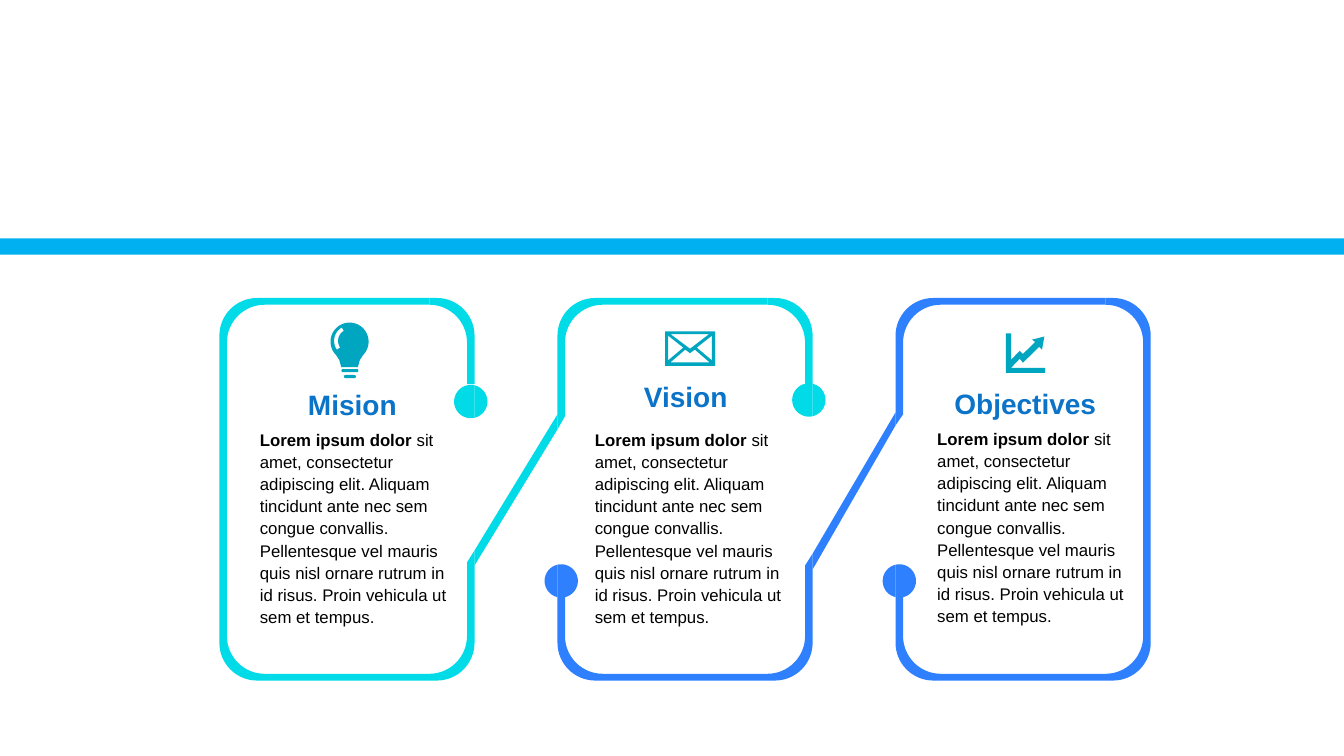
import math

import pptx
import pptx.dml.color
import pptx.enum.shapes
import pptx.enum.text
import pptx.util

Cm = pptx.util.Cm
SHAPES = pptx.enum.shapes.MSO_SHAPE
CYAN, BLUE, TEAL, BAR = "00DBE7", "2E80FF", "00A5C0", "00B0F0"
LEFT, PITCH, WIDTH = 5.53, 8.52, 6.43
TOP, BOTTOM, RADIUS = 7.51, 17.15, 0.95
SIDE, EDGE = 0.19, 0.17
SEAM = WIDTH - SIDE - RADIUS
SEAM_ENDS = ([(SEAM, TOP)], [(SEAM, TOP + EDGE)])
HOOK_ENDS = ([(WIDTH, 9.68)], [(WIDTH - SIDE, 9.68)])
FOOT_ENDS = ([(0, 15.04)], [(SIDE, 15.04)])
LOREM = ("sit amet, consectetur adipiscing elit. Aliquam tincidunt ante nec sem "
         "congue convallis. Pellentesque vel mauris quis nisl ornare rutrum in id "
         "risus. Proin vehicula ut sem et tempus.")
PANELS = [
    ("Mision", 5.92, 9.65, 6.3, 10.65),
    ("Vision", 14.32, 9.45, 14.74, 10.65),
    ("Objectives", 22.88, 9.62, 23.37, 10.63),
]
LINKS = [(0, 13.87, 14.25, 10.44, 10.82, CYAN), (1, 13.95, 14.35, 10.39, 10.72, BLUE)]
KNOBS = [(0, WIDTH - SIDE / 2, 10.12, CYAN), (1, WIDTH - SIDE / 2, 10.08, CYAN),
         (1, SIDE / 2, 14.64, BLUE), (2, SIDE / 2, 14.64, BLUE)]
ENVELOPE = [
    [(16.76, 8.35), (16.76, 9.22), (18.02, 9.22), (18.02, 8.35)],
    [(17.39, 8.79), (16.9, 8.42), (17.87, 8.42)],
    [(17.22, 8.76), (16.84, 9.08), (16.84, 8.46)],
    [(17.27, 8.81), (17.39, 8.9), (17.51, 8.81), (17.88, 9.13), (16.9, 9.13)],
    [(17.56, 8.76), (17.94, 8.46), (17.94, 9.08)],
]
TREND = [(25.48, 9.27), (25.7, 9.04), (25.78, 9.14), (26.19, 8.74), (26.26, 8.81),
         (26.32, 8.48), (26.01, 8.56), (26.09, 8.62), (25.78, 8.92), (25.7, 8.84),
         (25.48, 9.07), (25.48, 8.4), (25.35, 8.4), (25.35, 9.4), (26.34, 9.4),
         (26.34, 9.27)]


def rgb(value):
    return pptx.dml.color.RGBColor.from_string(value)


def paint(sp, color):
    sp.shadow.inherit = False
    sp.fill.solid()
    sp.fill.fore_color.rgb = rgb(color)
    sp.line.fill.background()


def add_block(slide, kind, x, y, w, h, color):
    sp = slide.shapes.add_shape(kind, Cm(x), Cm(y), Cm(w), Cm(h))
    paint(sp, color)
    return sp


def add_outline(slide, contours, color, left=0):
    points = [[(Cm(left + x), Cm(y)) for x, y in contour] for contour in contours]
    builder = slide.shapes.build_freeform(*points[0][0])
    builder.add_line_segments(points[0][1:])
    for contour in points[1:]:
        builder.move_to(*contour[0])
        builder.add_line_segments(contour[1:])
    paint(builder.convert_to_shape(), color)


def add_text(slide, x, y, w, h, runs, size=12, color="000000", align=None, spacing=None):
    tf = slide.shapes.add_textbox(Cm(x), Cm(y), Cm(w), Cm(h)).text_frame
    tf.word_wrap = True
    tf.auto_size = pptx.enum.text.MSO_AUTO_SIZE.SHAPE_TO_FIT_TEXT
    p = tf.paragraphs[0]
    p.alignment = align
    p.line_spacing = spacing
    for text, bold in runs:
        r = p.add_run()
        r.text = text
        r.font.name = "Arial"
        r.font.size = pptx.util.Pt(size)
        r.font.bold = bold
        r.font.color.rgb = rgb(color)


def arc(cx, cy, radius, start, end, steps=16):
    angles = [math.radians(start + (end - start) * i / steps) for i in range(steps + 1)]
    return [(cx + radius * math.cos(a), cy + radius * math.sin(a)) for a in angles]


def panel_left(index):
    return LEFT + PITCH * index


def corner_points(corners, inner, clockwise):
    dx, dy = (SIDE, EDGE) if inner else (0, 0)
    x1, x2 = dx + RADIUS, WIDTH - dx - RADIUS
    y1, y2 = TOP + dy + RADIUS, BOTTOM - dy - RADIUS
    centres = {"BR": (x2, y2, 0), "BL": (x1, y2, 90), "TL": (x1, y1, 180), "TR": (x2, y1, 270)}
    points = []
    for corner in corners:
        cx, cy, start = centres[corner]
        turn = arc(cx, cy, RADIUS, start, start + 90)
        points += turn if clockwise else turn[::-1]
    return points


def add_band(slide, index, corners, clockwise, start, end, color):
    outer, inner = [start[i] + corner_points(corners, bool(i), clockwise) + end[i]
                    for i in (0, 1)]
    add_outline(slide, [outer + inner[::-1]], color, panel_left(index))


def add_link(slide, index, low_top, low_bottom, high_top, high_bottom, color):
    add_outline(slide, [[(PITCH, high_top), (PITCH, high_bottom),
                         (WIDTH, low_bottom), (WIDTH, low_top)]], color, panel_left(index))
    elbow = ([(WIDTH, low_bottom), (WIDTH, low_top)], [(WIDTH - SIDE, low_top + 0.3)])
    shoulder = ([(0, high_bottom)], [(SIDE, high_top + 0.05)])
    corners = ["TL", "BL", "BR"] if index == 0 else ["BL", "BR"]
    start = SEAM_ENDS if index == 0 else FOOT_ENDS
    add_band(slide, index, corners, False, start, elbow, color)
    add_band(slide, index + 1, ["TL"], True, shoulder, SEAM_ENDS, color)


def add_knob(slide, index, x, y, color):
    radius, cut = 0.42, 77
    slices = [arc(x, y, radius, 180 - cut, 180 + cut),
              arc(x, y, radius, -180 + cut, -cut) + arc(x, y, radius, cut, 180 - cut),
              arc(x, y, radius, -cut, cut)]
    for part in slices:
        add_outline(slide, [part], color, panel_left(index))


def add_bulb(slide):
    glass = arc(8.81, 8.61, 0.48, 135, 405, 40) + [(9.07, 9.07), (9.02, 9.25), (8.6, 9.25), (8.55, 9.07)]
    shine = arc(8.81, 8.59, 0.39, 145, 240) + arc(8.81, 8.59, 0.29, 240, 145)
    add_outline(slide, [glass, shine], TEAL)
    for y, w in ((9.3, 0.43), (9.45, 0.3)):
        sp = add_block(slide, SHAPES.ROUNDED_RECTANGLE, 8.82 - w / 2, y, w, 0.08, TEAL)
        sp.adjustments[0] = 0.5


def main():
    prs = pptx.Presentation()
    prs.slide_width, prs.slide_height = Cm(33.87), Cm(19.05)
    slide = prs.slides.add_slide(prs.slide_layouts[6])
    for heading, head_x, head_y, body_x, body_y in PANELS:
        add_text(slide, body_x, body_y, 5.36, 5.87,
                 [("Lorem ipsum dolor ", True), (LOREM, False)], spacing=1.1)
        add_text(slide, head_x, head_y, 5.92, 1.12, [(heading, True)], size=20,
                 color="0B73C8", align=pptx.enum.text.PP_ALIGN.CENTER)
    add_bulb(slide)
    add_outline(slide, ENVELOPE, TEAL)
    add_outline(slide, [TREND], TEAL)
    add_block(slide, SHAPES.RECTANGLE, 0, 6.01, 33.87, 0.41, BAR)
    add_band(slide, 2, ["TR", "BR", "BL"], True, SEAM_ENDS, FOOT_ENDS, BLUE)
    for link in LINKS[::-1]:
        add_link(slide, *link)
    for index in (1, 0):
        add_band(slide, index, ["TR"], True, SEAM_ENDS, HOOK_ENDS, CYAN)
    for knob in KNOBS[::-1]:
        add_knob(slide, *knob)
    prs.save("out.pptx")


if __name__ == "__main__":
    main()
